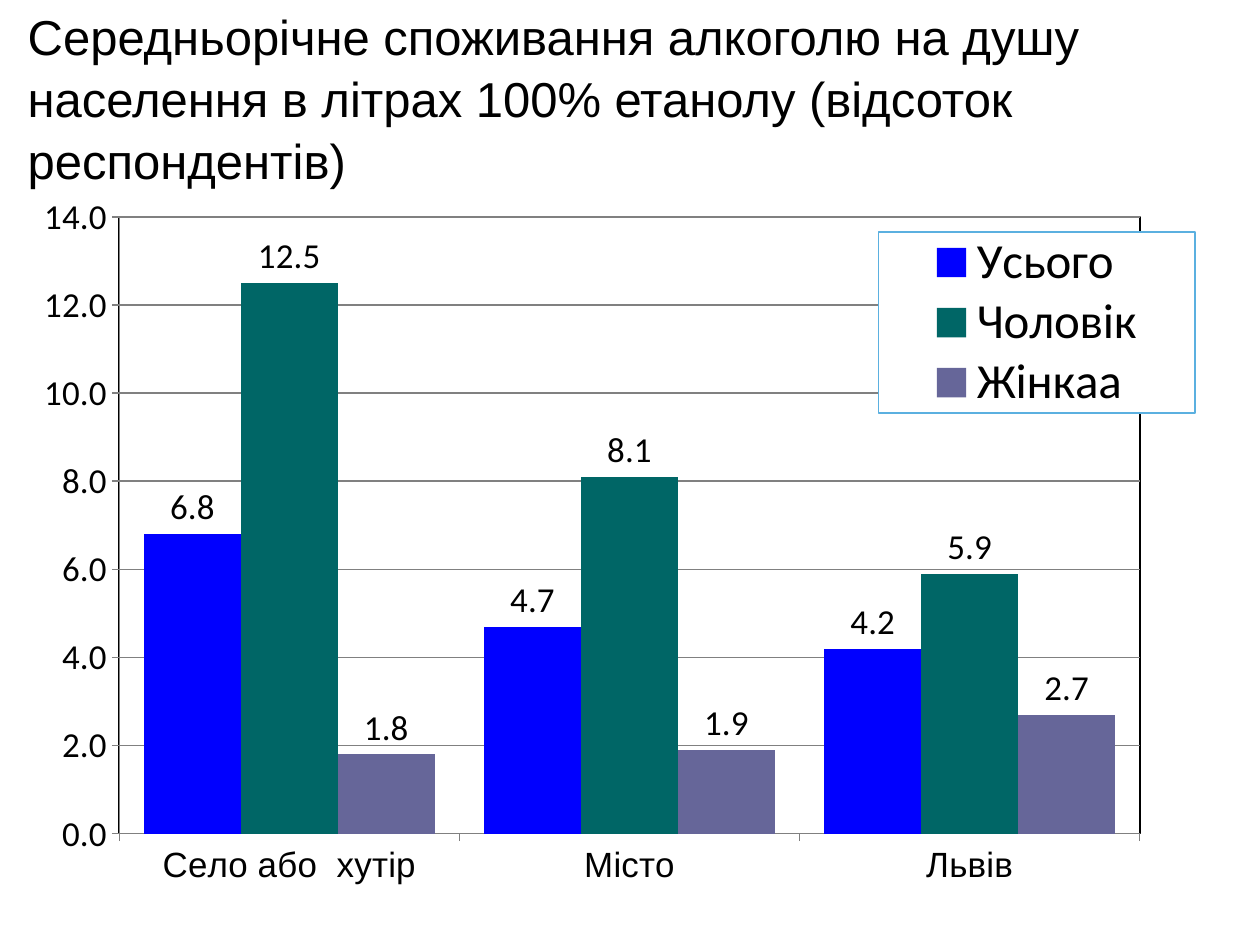
from lxml import etree
from pptx import Presentation
from pptx.chart.data import CategoryChartData
from pptx.dml.color import RGBColor
from pptx.enum.chart import XL_CHART_TYPE, XL_LABEL_POSITION, XL_LEGEND_POSITION, XL_TICK_MARK
from pptx.enum.text import MSO_ANCHOR, MSO_AUTO_SIZE, PP_ALIGN
from pptx.oxml import parse_xml
from pptx.oxml.ns import nsdecls, qn
from pptx.util import Inches, Pt

COLORS = {
    "text": "000000",
    "background": "FFFFFF",
    "grid": "808080",
    "frame": "000000",
    "legend_line": "5BB0E0",
}
TITLE = "Середньорічне споживання алкоголю на душу населення в літрах 100% етанолу (відсоток респондентів)"
PLACES = ["Село або  хутір", "Місто", "Львів"]
CONSUMPTION = [
    ("Усього", [6.8, 4.7, 4.2], "0000FF"),
    ("Чоловік", [12.5, 8.1, 5.9], "006666"),
    ("Жінкаa", [1.8, 1.9, 2.7], "666699"),
]


def rgb(name):
    """Return the palette colour with this name."""
    return RGBColor.from_string(COLORS[name])


def apply(target, values):
    """Set each attribute of the target from a dict."""
    for key, value in values.items():
        setattr(target, key, value)


def set_font(font, name, size):
    """Give a font its face, size and the text colour."""
    apply(font, {"name": name, "size": Pt(size), "bold": False})
    font.color.rgb = rgb("text")


def manual_layout(box, inner=False):
    """Return a chart layout element for a box in fractions of the chart."""
    layout = etree.Element(qn("c:layout"))
    manual = etree.SubElement(layout, qn("c:manualLayout"))
    settings = [("layoutTarget", "inner")] if inner else []
    settings += [("xMode", "edge"), ("yMode", "edge"), *zip("xywh", box)]
    for tag, value in settings:
        etree.SubElement(manual, qn(f"c:{tag}")).set("val", str(value))
    return layout


def outline(line_color, width):
    """Return white-filled shape properties with a solid outline."""
    return parse_xml(
        f'<c:spPr {nsdecls("c", "a")}>'
        f'<a:solidFill><a:srgbClr val="{COLORS["background"]}"/></a:solidFill>'
        f'<a:ln w="{Pt(width)}"><a:solidFill><a:srgbClr val="{COLORS[line_color]}"/>'
        "</a:solidFill></a:ln></c:spPr>"
    )


def add_title(slide, box):
    """Place the heading in the title placeholder."""
    title = slide.shapes.title
    apply(title, dict(zip(("left", "top", "width", "height"), box)))
    frame = title.text_frame
    frame.text = TITLE
    apply(frame, {
        "word_wrap": True,
        "auto_size": MSO_AUTO_SIZE.NONE,
        "vertical_anchor": MSO_ANCHOR.MIDDLE,
    })
    heading = frame.paragraphs[0]
    apply(heading, {"alignment": PP_ALIGN.LEFT, "line_spacing": 1.05})
    set_font(heading.runs[0].font, "Arial", 28)


def format_axes(chart):
    """Format the place axis and the litre axis with its grid."""
    litres = chart.value_axis
    apply(litres, {"minimum_scale": 0, "maximum_scale": 14, "major_unit": 2,
                   "has_major_gridlines": True})
    apply(litres.tick_labels, {"number_format": "0.0", "number_format_is_linked": False})
    gridline = litres.major_gridlines.format.line
    gridline.color.rgb = rgb("grid")
    gridline.width = Pt(0.75)
    for axis, face in ((chart.category_axis, "Arial"), (litres, "Calibri")):
        apply(axis, {"major_tick_mark": XL_TICK_MARK.OUTSIDE,
                     "minor_tick_mark": XL_TICK_MARK.NONE})
        axis.format.line.color.rgb = rgb("grid")
        set_font(axis.tick_labels.font, face, 20)


def format_legend(chart, box):
    """Place the framed legend over the plot."""
    chart.has_legend = True
    legend = chart.legend
    apply(legend, {"position": XL_LEGEND_POSITION.RIGHT, "include_in_layout": False})
    set_font(legend.font, "Calibri", 28)
    element = legend._element
    for layout in element.findall(qn("c:layout")):
        element.remove(layout)
    overlay = element.find(qn("c:overlay"))
    overlay.addprevious(manual_layout(box))
    overlay.addnext(outline("legend_line", 0.75))


def add_consumption_chart(slide, box):
    """Add the clustered columns of consumption by place and sex."""
    data = CategoryChartData(number_format="0.0")
    data.categories = PLACES
    for name, values, _ in CONSUMPTION:
        data.add_series(name, values)
    chart = slide.shapes.add_chart(XL_CHART_TYPE.COLUMN_CLUSTERED, *box, data).chart
    chart.has_title = False
    set_font(chart.font, "Calibri", 18)

    columns = chart.plots[0]
    apply(columns, {"gap_width": 51, "overlap": 0, "vary_by_categories": False})
    for series, (_, _, color) in zip(columns.series, CONSUMPTION):
        series.format.fill.solid()
        series.format.fill.fore_color.rgb = RGBColor.from_string(color)
        apply(series.data_labels, {
            "show_value": True,
            "position": XL_LABEL_POSITION.OUTSIDE_END,
            "number_format": "0.0",
            "number_format_is_linked": False,
        })
        set_font(series.data_labels.font, "Calibri", 20)

    format_axes(chart)
    format_legend(chart, (0.71, 0.05, 0.27, 0.25))
    plot_area = chart._chartSpace.chart.plotArea
    for layout in plot_area.findall(qn("c:layout")):
        plot_area.remove(layout)
    plot_area.insert(0, manual_layout((0.062, 0.029, 0.871, 0.852), inner=True))
    plot_area.append(outline("frame", 1))


def main():
    """Build and save the slide."""
    deck = Presentation()
    apply(deck, {"slide_width": Inches(10), "slide_height": Inches(7.5)})
    slide = deck.slides.add_slide(deck.slide_layouts[5])
    slide.background.fill.solid()
    slide.background.fill.fore_color.rgb = rgb("background")
    add_title(slide, (Inches(0.12), Inches(0.06), Inches(10), Inches(1.41)))
    add_consumption_chart(slide, (Inches(0.35), Inches(1.55), Inches(9.32), Inches(5.75)))
    deck.save("out.pptx")


if __name__ == "__main__":
    main()
